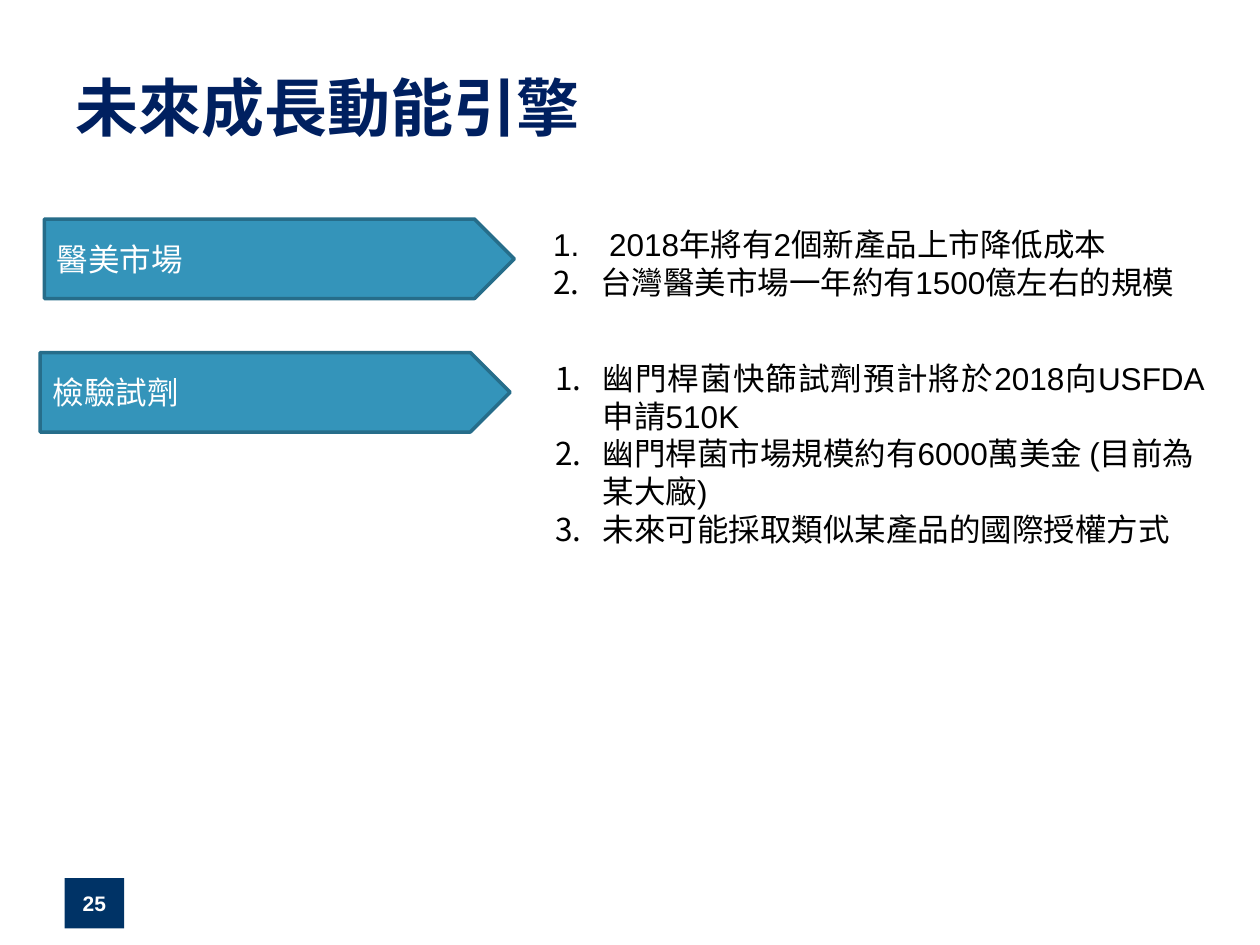
from lxml import etree
from pptx import Presentation
from pptx.dml import color
from pptx.enum import shapes, text
from pptx.oxml import ns
from pptx.util import Pt

LATIN = "Arial"
ASIAN = "Noto Sans CJK SC"


def paint(value):
    return color.RGBColor.from_string(value)


def write(para, words, size=18, ink="000000", bold=False, font=LATIN, align=text.PP_ALIGN.LEFT):
    span = para.add_run()
    span.text = words
    span.font.size = Pt(size)
    span.font.bold = bold
    span.font.color.rgb = paint(ink)
    span.font.name = font
    etree.SubElement(span.font._element, ns.qn("a:ea"), typeface=ASIAN)
    para.alignment = align


def number(para, font):
    props = para._p.get_or_add_pPr()
    props.set("marL", str(Pt(27)))
    props.set("indent", str(-Pt(27)))
    etree.SubElement(props, ns.qn("a:buFont"), typeface=font)
    etree.SubElement(props, ns.qn("a:buAutoNum"), type="arabicPeriod")


class Painter:
    navy = "002060"
    badge_fill = "003366"
    arrow_fill = "3494BA"
    arrow_edge = "266D8A"
    white = "FFFFFF"

    def __init__(self, page):
        self.page = page

    def title(self, words, left, top, width, height):
        box = self.page.shapes.title
        box.left, box.top, box.width, box.height = map(Pt, (left, top, width, height))
        box.text_frame.vertical_anchor = text.MSO_ANCHOR.MIDDLE
        write(box.text_frame.paragraphs[0], words, size=36, ink=self.navy, bold=True, font=ASIAN)

    def block(self, kind, fill, left, top, width, height):
        box = self.page.shapes.add_shape(kind, *map(Pt, (left, top, width, height)))
        box.shadow.inherit = False
        box.fill.solid()
        box.fill.fore_color.rgb = paint(fill)
        box.text_frame.vertical_anchor = text.MSO_ANCHOR.MIDDLE
        return box

    def badge(self, words, left, top, width, height):
        box = self.block(shapes.MSO_SHAPE.RECTANGLE, self.badge_fill, left, top, width, height)
        box.line.fill.background()
        write(box.text_frame.paragraphs[0], words, size=12, ink=self.white, bold=True,
              align=text.PP_ALIGN.CENTER)

    def arrow(self, words, left, top, width=268.5, height=45.4):
        box = self.block(shapes.MSO_SHAPE.PENTAGON, self.arrow_fill, left, top, width, height)
        box.line.color.rgb = paint(self.arrow_edge)
        box.line.width = Pt(2)
        write(box.text_frame.paragraphs[0], words, ink=self.white)

    def numbered(self, items, left, top, width, height, font=LATIN):
        box = self.page.shapes.add_textbox(*map(Pt, (left, top, width, height)))
        frame = box.text_frame
        frame.word_wrap = True
        for index, (words, align) in enumerate(items):
            para = frame.add_paragraph() if index else frame.paragraphs[0]
            write(para, words, align=align)
            number(para, font)


def main():
    deck = Presentation()
    deck.slide_width, deck.slide_height = Pt(720), Pt(540)
    painter = Painter(deck.slides.add_slide(deck.slide_layouts[5]))
    justify, left = text.PP_ALIGN.JUSTIFY, text.PP_ALIGN.LEFT

    painter.title("未來成長動能引擎", 36, 21.6, 648, 78.5)
    painter.badge("25", 36.9, 501.8, 34, 28.8)
    painter.arrow("醫美市場", 25.4, 125.2)
    painter.numbered([
        (" 2018年將有2個新產品上市降低成本", justify),
        ("台灣醫美市場一年約有1500億左右的規模", justify),
    ], 309, 125.2, 374.4, 51)
    painter.arrow("檢驗試劑", 23, 201.5)
    painter.numbered([
        ("幽門桿菌快篩試劑預計將於2018向USFDA申請510K", justify),
        ("幽門桿菌市場規模約有6000萬美金 (目前為某大廠)", left),
        ("未來可能採取類似某產品的國際授權方式", left),
    ], 310.3, 201.5, 385.2, 116.6, font=ASIAN)
    deck.save("out.pptx")


if __name__ == "__main__":
    main()
